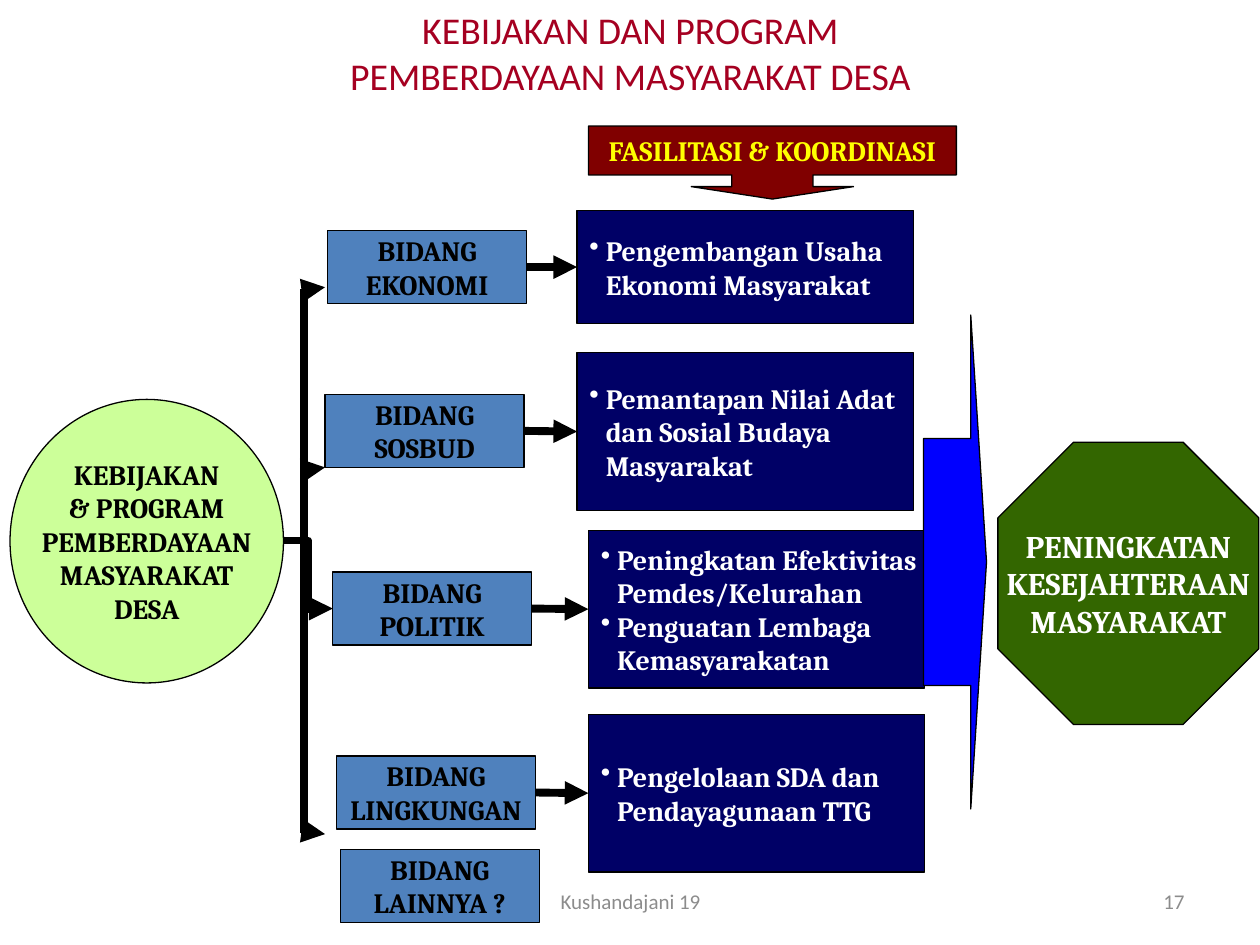
from pptx import Presentation
from pptx.dml.color import RGBColor
from pptx.enum.shapes import MSO_CONNECTOR, MSO_SHAPE
from pptx.enum.text import MSO_ANCHOR, PP_ALIGN
from pptx.oxml.ns import qn
from pptx.util import Inches, Pt
from lxml import etree

RECTANGLE, ELLIPSE, OCTAGON = MSO_SHAPE.RECTANGLE, MSO_SHAPE.OVAL, MSO_SHAPE.OCTAGON
RIGHT_ARROW, CALLOUT = MSO_SHAPE.RIGHT_ARROW, MSO_SHAPE.DOWN_ARROW_CALLOUT
STRAIGHT, ELBOW = MSO_CONNECTOR.STRAIGHT, MSO_CONNECTOR.ELBOW
MIDDLE = MSO_ANCHOR.MIDDLE
CENTER, RIGHT, JUSTIFY = PP_ALIGN.CENTER, PP_ALIGN.RIGHT, PP_ALIGN.JUSTIFY
LEFT_SIDE, RIGHT_SIDE = 1, 3

BLACK, WHITE, YELLOW = "000000", "FFFFFF", "FFFF00"
CRIMSON, GRAY, MAROON = "A50021", "8C8C8C", "800000"
LIME, STEEL, NAVY, BLUE, GREEN = "CCFF99", "4F81BD", "000066", "0000FF", "336600"

FIELD_SIZE = (1.58, 0.58)
PROGRAM_WIDTH = 2.67
BULLET = "•"

# Field name, field position, program position and height, program lines
ROWS = [
    ("EKONOMI", (2.6, 1.83), (4.58, 1.67), 0.9,
     ["•Pengembangan Usaha", "Ekonomi Masyarakat"]),
    ("SOSBUD", (2.58, 3.13), (4.58, 2.8), 1.25,
     ["•Pemantapan Nilai Adat", "dan Sosial Budaya", "Masyarakat"]),
    ("POLITIK", (2.64, 4.54), (4.67, 4.21), 1.25,
     ["•Peningkatan Efektivitas", "Pemdes/Kelurahan",
      "•Penguatan Lembaga", "Kemasyarakatan"]),
    ("LINGKUNGAN", (2.67, 6), (4.67, 5.67), 1.25,
     ["•Pengelolaan SDA dan", "Pendayagunaan TTG"]),
]


def rgb(color):
    return RGBColor.from_string(color)


def format_span(span, size, color, name, bold):
    values = {"size": Pt(size), "name": name, "bold": bold}
    for key, value in values.items():
        setattr(span.font, key, value)
    span.font.color.rgb = rgb(color)


def indent_line(para, bulleted):
    """Hang a bullet, or align a continuation line with the bulleted text."""
    properties = para._p.get_or_add_pPr()
    properties.set("marL", str(Inches(0.13)))
    properties.set("indent", str(Inches(-0.13 if bulleted else 0)))
    if bulleted:
        etree.SubElement(properties, qn("a:buChar")).set("char", BULLET)


def write_lines(box, lines, size, color, name="Cambria", bold=True,
                align=CENTER, wrap=False, listed=False):
    frame = box.text_frame
    frame.word_wrap = wrap
    frame.vertical_anchor = MIDDLE
    for index, line in enumerate(lines):
        para = frame.add_paragraph() if index else frame.paragraphs[0]
        para.text = line.lstrip(BULLET)
        para.alignment = align
        if listed:
            indent_line(para, line.startswith(BULLET))
        for span in para.runs:
            format_span(span, size, color, name, bold)


def add_label(page, place, text, size, color, align=CENTER):
    box = page.shapes.add_textbox(*map(Inches, place))
    write_lines(box, [text], size, color, "Calibri", False, align, wrap=True)


def add_block(page, kind, place, fill, adjustments=()):
    block = page.shapes.add_shape(kind, *map(Inches, place))
    block.shadow.inherit = False
    block.fill.solid()
    block.fill.fore_color.rgb = rgb(fill)
    block.line.color.rgb = rgb(BLACK)
    block.line.width = Pt(0.75)
    for index, value in enumerate(adjustments):
        block.adjustments[index] = value
    return block


def add_field(page, name, corner):
    field = add_block(page, RECTANGLE, (*corner, *FIELD_SIZE), STEEL)
    write_lines(field, ["BIDANG", name], 16, BLACK)
    return field


def add_arrow(page, kind, start, end):
    arrow = page.shapes.add_connector(kind, *map(Inches, (*start, *end)))
    arrow.line.color.rgb = rgb(BLACK)
    arrow.line.width = Pt(4.5)
    head = etree.SubElement(arrow.line._get_or_add_ln(), qn("a:tailEnd"))
    head.set("type", "triangle")
    etree.SubElement(arrow._element.spPr, qn("a:effectLst"))
    return arrow


def add_row(page, name, field_corner, program_corner, height, lines):
    field = add_field(page, name, field_corner)
    program = add_block(
        page, RECTANGLE, (*program_corner, PROGRAM_WIDTH, height), NAVY)
    write_lines(program, lines, 16, WHITE, align=JUSTIFY, listed=True)
    middle = field_corner[1] + FIELD_SIZE[1] / 2
    arrow = add_arrow(page, STRAIGHT, (field_corner[0] + FIELD_SIZE[0], middle),
                      (program_corner[0], middle))
    arrow.begin_connect(field, RIGHT_SIDE)
    arrow.end_connect(program, LEFT_SIDE)
    return field


def main():
    deck = Presentation()
    deck.slide_width, deck.slide_height = Inches(10), Inches(7.5)
    page = deck.slides.add_slide(deck.slide_layouts[6])

    # Title and page number
    add_label(page, (0.17, 0.08, 9.67, 0.67),
              "KEBIJAKAN DAN PROGRAM\vPEMBERDAYAAN MASYARAKAT DESA", 21.6, CRIMSON)
    add_label(page, (7.17, 6.95, 2.33, 0.4), "17", 12, GRAY, RIGHT)

    # Policy circle
    policy = add_block(page, ELLIPSE, (0.08, 3.17, 2.17, 2.25), LIME)
    write_lines(policy, ["KEBIJAKAN", "& PROGRAM", "PEMBERDAYAAN",
                         "MASYARAKAT", "DESA"], 16, BLACK)

    # Fields with their programs
    fields = {row[0]: add_row(page, *row) for row in ROWS}

    # Branches from the policy to the fields
    for end in [(2.58, 2.28), (2.58, 3.71), (2.64, 4.83), (2.58, 6.62)]:
        branch = add_arrow(page, ELBOW, (2.25, 4.29), end)
        if end == (2.64, 4.83):
            branch.end_connect(fields["POLITIK"], LEFT_SIDE)

    # Outcome
    outcome = add_block(page, OCTAGON, (7.92, 3.51, 2.07, 2.24), GREEN, [0.29])
    write_lines(outcome, ["PENINGKATAN", "KESEJAHTERAAN", "MASYARAKAT"], 18, WHITE)
    add_block(page, RIGHT_ARROW, (7.33, 2.5, 0.5, 3.92), BLUE, [0.5, 0.25])

    # Facilitation callout
    callout = add_block(page, CALLOUT, (4.67, 1, 2.92, 0.58), MAROON,
                        [1.11, 1.11, 0.17, 0.67])
    write_lines(callout, ["FASILITASI & KOORDINASI"], 16, YELLOW)

    # Remaining field and footer
    add_field(page, "LAINNYA ?", (2.7, 6.74))
    add_label(page, (3.42, 6.95, 3.17, 0.4), "Kushandajani 19", 12, GRAY)

    deck.save("out.pptx")


if __name__ == "__main__":
    main()
